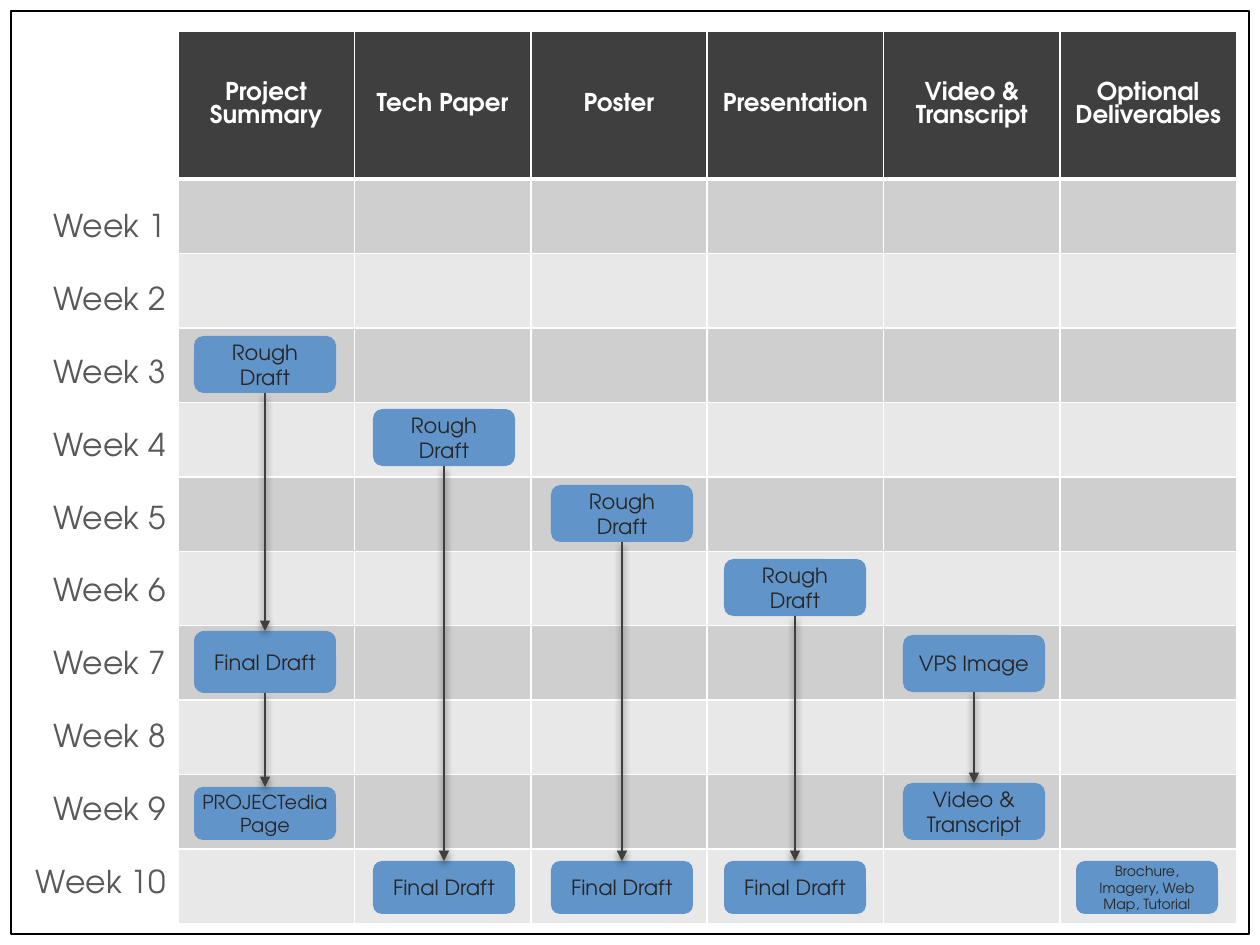
from lxml import etree
from pptx import Presentation
from pptx import util as u
from pptx.dml.color import RGBColor
from pptx.enum import shapes, text
from pptx.oxml import parse_xml
from pptx.oxml.ns import nsdecls, qn

PX = u.Inches(1) / 126
THEME = {
    "font": "TeX Gyre Adventor",
    "white": "FFFFFF", "frame": "000000", "header": "3F3F3F",
    "bands": ("CFCFCF", "E8E8E8"),
    "box": "6194C8", "box_text": "262626", "week_text": "595959",
    "arrow": "3F3F3F",
    "header_size": 14, "week_size": 18, "box_size": 12,
    "page_size": 11, "optional_size": 8,
}
DELIVERABLES = ["Project Summary", "Tech Paper", "Poster", "Presentation",
                "Video & Transcript", "Optional Deliverables"]
WEEKS = 10
BOX_WIDTH = 142
FINAL = ("Final Draft", 861, 53, {})

# One entry per column: left edge, then its steps as (label, top, height, format)
TRACKS = [
    (194, [("Rough Draft", 336, 57, {}),
           ("Final Draft", 631, 62, {}),
           ("PROJECTedia Page", 787, 53,
            {"size": THEME["page_size"], "side_inset": 0})]),
    (373, [("Rough Draft", 409, 57, {}), FINAL]),
    (551, [("Rough Draft", 485, 57, {}), FINAL]),
    (724, [("Rough Draft", 559, 57, {}), FINAL]),
    (903, [("VPS Image", 635, 57, {}), ("Video & Transcript", 783, 57, {})]),
    (1076, [("Brochure, Imagery, Web Map, Tutorial", 861, 53,
             {"size": THEME["optional_size"]})]),
]


def px(*lengths):
    return [u.Emu(round(n * PX)) for n in lengths]


def rgb(value):
    return RGBColor.from_string(value)


def set_all(obj, values):
    for name, value in values.items():
        setattr(obj, name, value)


def write(p, words, size, color, align=text.PP_ALIGN.CENTER, bold=False, **spacing):
    set_all(p, {"alignment": align, **spacing})
    r = p.add_run()
    r.text = words
    set_all(r.font, {"name": THEME["font"], "size": u.Pt(size), "bold": bold})
    r.font.color.rgb = rgb(color)


def add_panel(slide, kind, box, fill, line=None):
    """Add a flat preset shape, outlined only when a line colour is given."""
    sp = slide.shapes.add_shape(kind, *px(*box))
    sp.shadow.inherit = False
    sp.fill.solid()
    sp.fill.fore_color.rgb = rgb(fill)
    if line:
        sp.line.color.rgb = rgb(line)
        sp.line.width = u.Pt(0.75)
    else:
        sp.line.fill.background()
    return sp


def style_cell(cell, fill, top, bottom):
    """Give a cell its fill and white borders, 1 pt at the sides."""
    tc_pr = cell._tc.get_or_add_tcPr()
    for side, width in {"L": 1, "R": 1, "T": top, "B": bottom}.items():
        tc_pr.append(parse_xml(
            f'<a:ln{side} {nsdecls("a")} w="{u.Pt(width)}"><a:solidFill>'
            f'<a:srgbClr val="{THEME["white"]}"/></a:solidFill></a:ln{side}>'))
    cell.fill.solid()
    cell.fill.fore_color.rgb = rgb(fill)


def add_schedule(slide):
    left, top, column, header, body = 178, 31, 176.4, 148, 745
    count = len(DELIVERABLES)
    table = slide.shapes.add_table(
        WEEKS + 1, count, *px(left, top, column * count, header + body)).table
    for col in table.columns:
        col.width = px(column)[0]
    for i, row in enumerate(table.rows):
        row.height = px(body / WEEKS if i else header)[0]
        fill = THEME["bands"][(i - 1) % 2] if i else THEME["header"]
        for cell, name in zip(row.cells, DELIVERABLES):
            style_cell(cell, fill, 3 if i == 1 else 1, 1 if i else 3)
            if i == 0:
                cell.vertical_anchor = text.MSO_ANCHOR.MIDDLE
                write(cell.text_frame.paragraphs[0], name, THEME["header_size"],
                      THEME["white"], bold=True)


def add_week_labels(slide):
    tf = slide.shapes.add_textbox(*px(20, 200, 158, 712)).text_frame
    set_all(tf, {"word_wrap": False,
                 "auto_size": text.MSO_AUTO_SIZE.SHAPE_TO_FIT_TEXT})
    for week in range(1, WEEKS + 1):
        p = tf.paragraphs[0] if week == 1 else tf.add_paragraph()
        write(p, f"Week {week}", THEME["week_size"], THEME["week_text"],
              text.PP_ALIGN.RIGHT, space_after=u.Pt(20))


def add_step(slide, left, label, top, height, size=THEME["box_size"], side_inset=None):
    sp = add_panel(slide, shapes.MSO_SHAPE.ROUNDED_RECTANGLE,
                   (left, top, BOX_WIDTH, height), THEME["box"])
    tf = sp.text_frame
    set_all(tf, {"word_wrap": True, "vertical_anchor": text.MSO_ANCHOR.MIDDLE})
    if side_inset is not None:
        set_all(tf, {"margin_left": side_inset, "margin_right": side_inset})
    write(tf.paragraphs[0], label, size, THEME["box_text"])
    return sp


def add_arrow(slide, start, end):
    """Join the bottom of one step to the top of the next, with a soft shadow."""
    arrow = slide.shapes.add_connector(shapes.MSO_CONNECTOR.STRAIGHT, 0, 0, 0, 0)
    arrow.begin_connect(start, 2)
    arrow.end_connect(end, 0)
    arrow.line.color.rgb = rgb(THEME["arrow"])
    arrow.line.width = u.Pt(1.57)
    etree.SubElement(arrow.line._get_or_add_ln(), qn("a:tailEnd"), type="triangle")
    arrow._element.spPr.append(parse_xml(
        f'<a:effectLst {nsdecls("a")}><a:outerShdw blurRad="{u.Pt(4)}" '
        f'dist="{u.Pt(2)}" dir="5400000" rotWithShape="0"><a:srgbClr val="000000">'
        '<a:alpha val="45000"/></a:srgbClr></a:outerShdw></a:effectLst>'))


def add_track(slide, left, steps):
    boxes = [add_step(slide, left, label, top, height, **style)
             for label, top, height, style in steps]
    for start, end in zip(boxes, boxes[1:]):
        add_arrow(slide, start, end)


def main():
    prs = Presentation()
    prs.slide_width, prs.slide_height = px(1260, 945)
    slide = prs.slides.add_slide(prs.slide_layouts[6])
    add_panel(slide, shapes.MSO_SHAPE.RECTANGLE, (11, 11, 1238, 923),
              THEME["white"], THEME["frame"])
    add_schedule(slide)
    add_week_labels(slide)
    for left, steps in TRACKS:
        add_track(slide, left, steps)
    prs.save("out.pptx")


if __name__ == "__main__":
    main()
